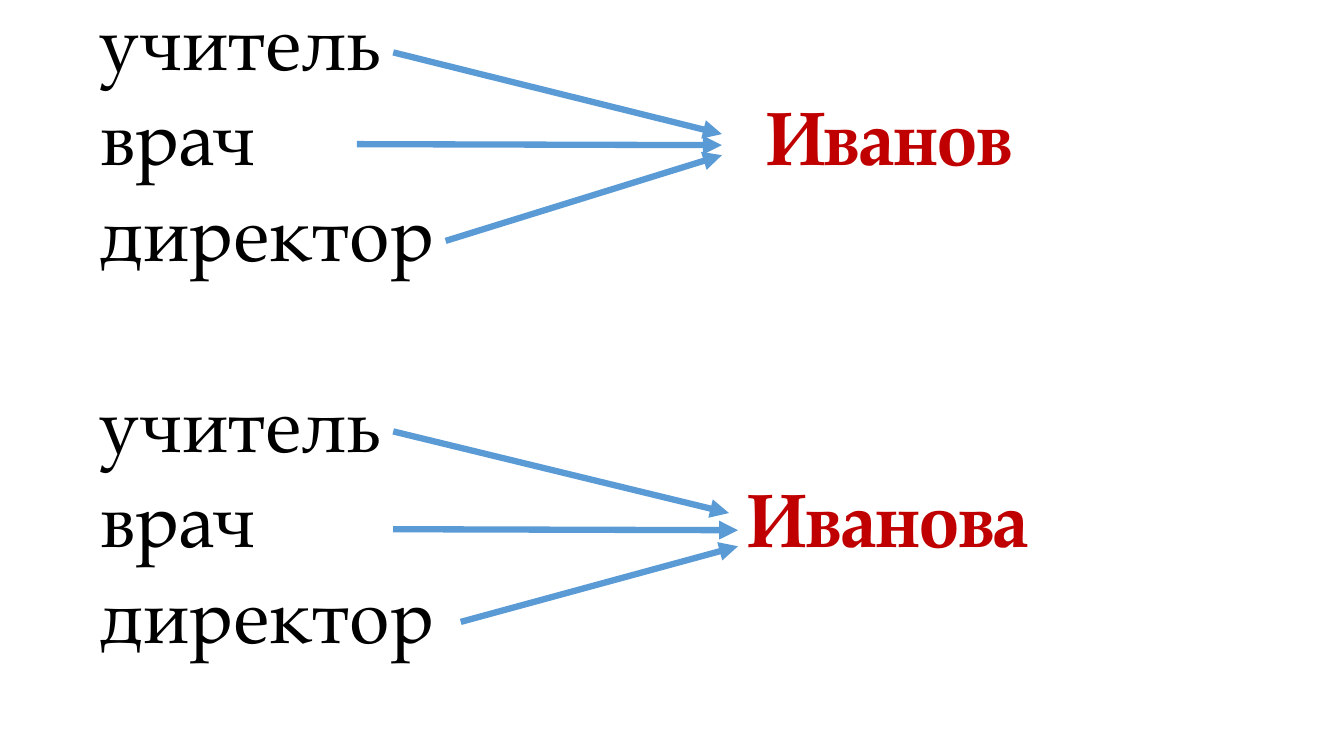
"""Build a slide linking three professions to a masculine and a feminine surname."""
from lxml import etree
from pptx import Presentation
from pptx.dml.color import RGBColor
from pptx.enum.shapes import MSO_CONNECTOR
from pptx.enum.text import MSO_ANCHOR
from pptx.oxml.ns import qn
from pptx.util import Inches, Pt

STRAIGHT = MSO_CONNECTOR.STRAIGHT
TOP = MSO_ANCHOR.TOP
FONT = "TeX Gyre Pagella"
COLORS = {"profession": "000000", "surname": "C00000", "arrow": "5B9BD5"}
PROFESSIONS = ["учитель", "врач", "директор"]
GROUPS = [
    {"surname": "Иванов", "top": 0, "tab": 6.6,
     "arrows": [(3.9, 0.52, 7.16, 1.33), (3.54, 1.43, 7.16, 1.44),
                (4.42, 2.39, 7.16, 1.54)]},
    {"surname": "Иванова", "top": 3.79, "tab": 6.42,
     "arrows": [(3.9, 4.28, 7.23, 5.09), (3.9, 5.25, 7.32, 5.26),
                (4.57, 6.17, 7.32, 5.42)]},
]


def add_word(paragraph, text, role, bold=False):
    run = paragraph.add_run()
    run.text = text
    run.font.name = FONT
    run.font.size = Pt(54)
    run.font.bold = bold
    run.font.color.rgb = RGBColor.from_string(COLORS[role])


prs = Presentation()
prs.slide_width = Inches(13.33)
prs.slide_height = Inches(7.5)
slide = prs.slides.add_slide(prs.slide_layouts[6])

for group in GROUPS:
    word_list = slide.shapes.add_textbox(
        Inches(0.9), Inches(group["top"]), Inches(11.5), Inches(3))
    frame = word_list.text_frame
    frame.word_wrap = True
    frame.vertical_anchor = TOP
    for index, profession in enumerate(PROFESSIONS):
        line = frame.paragraphs[0] if index == 0 else frame.add_paragraph()
        line.line_spacing = 0.9
        line.space_before = Pt(10)
        add_word(line, profession, "profession")
        if index == 1:
            add_word(line, "\t" + group["surname"], "surname", bold=True)
            tabs = etree.SubElement(line._p.get_or_add_pPr(), qn("a:tabLst"))
            etree.SubElement(tabs, qn("a:tab"),
                             pos=str(Inches(group["tab"])), algn="l")

    for ends in group["arrows"]:
        arrow = slide.shapes.add_connector(STRAIGHT, *map(Inches, ends))
        arrow.line.width = Pt(4.5)
        arrow.line.color.rgb = RGBColor.from_string(COLORS["arrow"])
        etree.SubElement(arrow.line._get_or_add_ln(), qn("a:tailEnd"), type="triangle")
        etree.SubElement(arrow._element.spPr, qn("a:effectLst"))

prs.save("out.pptx")
